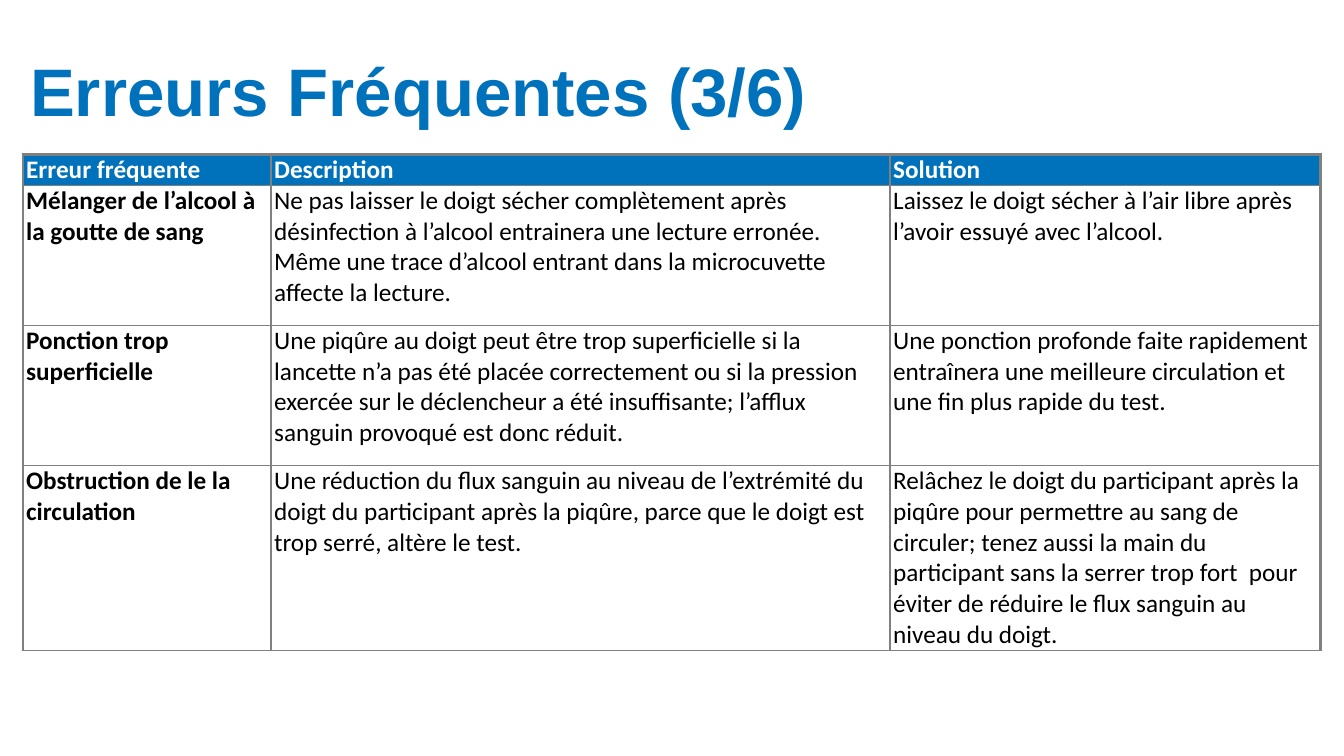
import pptx
import pptx.util
import pptx.dml.color
import pptx.enum.text
import pptx.oxml.ns
import lxml.etree

Cm = pptx.util.Cm
Pt = pptx.util.Pt
RGBColor = pptx.dml.color.RGBColor
ANCHOR = pptx.enum.text.MSO_ANCHOR
BLUE = RGBColor(0x00, 0x72, 0xBC)
WHITE = RGBColor(0xFF, 0xFF, 0xFF)
BLACK = RGBColor(0x00, 0x00, 0x00)
GREY = RGBColor(0x80, 0x80, 0x80)
THIN, THICK = Pt(1), Pt(2.25)


def write(frame, text, font="Calibri", size=18, color=BLACK, bold=False):
    frame.word_wrap = True
    part = frame.paragraphs[0]
    part.alignment = pptx.enum.text.PP_ALIGN.LEFT
    run = part.add_run()
    run.text = text
    run.font.name = font
    run.font.size = Pt(size)
    run.font.bold = bold
    run.font.color.rgb = color


def edge(cell, side, width):
    """Draw one border of a cell; side is L, R, T or B."""
    qn = pptx.oxml.ns.qn
    props = cell._tc.get_or_add_tcPr()
    line = lxml.etree.SubElement(props, qn("a:ln" + side), w=str(width))
    fill = lxml.etree.SubElement(line, qn("a:solidFill"))
    lxml.etree.SubElement(fill, qn("a:srgbClr"), val=str(GREY))


deck = pptx.Presentation()
deck.slide_width, deck.slide_height = Cm(33.87), Cm(19.05)
slide = deck.slides.add_slide(deck.slide_layouts[5])

title = slide.shapes.title
title.left, title.top = Cm(0.76), Cm(0.76)
title.width, title.height = Cm(32.44), Cm(2.54)
frame = title.text_frame
frame.auto_size = pptx.enum.text.MSO_AUTO_SIZE.NONE
frame.vertical_anchor = ANCHOR.BOTTOM
frame.margin_left = frame.margin_right = 0
frame.margin_top = frame.margin_bottom = 0
write(frame, "Erreurs Fréquentes (3/6)", font="Arial", size=48, color=BLUE, bold=True)
frame.paragraphs[0].line_spacing = 0.9

rows = [
    ("Erreur fréquente", "Description", "Solution"),
    ("Mélanger de l’alcool à la goutte de sang",
     "Ne pas laisser le doigt sécher complètement après désinfection à l’alcool "
     "entrainera une lecture erronée. Même une trace d’alcool entrant dans la "
     "microcuvette affecte la lecture.",
     "Laissez le doigt sécher à l’air libre après l’avoir essuyé avec l’alcool."),
    ("Ponction trop superficielle",
     "Une piqûre au doigt peut être trop superficielle si la lancette n’a pas été "
     "placée correctement ou si la pression exercée sur le déclencheur a été "
     "insuffisante; l’afflux sanguin provoqué est donc réduit.",
     "Une ponction profonde faite rapidement entraînera une meilleure circulation "
     "et une fin plus rapide du test."),
    ("Obstruction de le la circulation",
     "Une réduction du flux sanguin au niveau de l’extrémité du doigt du participant "
     "après la piqûre, parce que le doigt est trop serré, altère le test.",
     "Relâchez le doigt du participant après la piqûre pour permettre au sang de "
     "circuler; tenez aussi la main du participant sans la serrer trop fort  pour "
     "éviter de réduire le flux sanguin au niveau du doigt."),
]
widths = [6.25, 15.6, 10.85]
heights = [0.78, 3.53, 3.53, 4.67]

table = slide.shapes.add_table(len(rows), len(widths), Cm(0.58), Cm(3.89),
                               Cm(sum(widths)), Cm(sum(heights))).table
table.horz_banding = False
for col, width in zip(table.columns, widths):
    col.width = Cm(width)
for row, height in zip(table.rows, heights):
    row.height = Cm(height)

last = len(widths) - 1
for r, texts in enumerate(rows):
    for c, text in enumerate(texts):
        cell = table.cell(r, c)
        head = r == 0
        cell.margin_left = cell.margin_right = Cm(0.08)
        cell.margin_top = cell.margin_bottom = 0
        cell.vertical_anchor = ANCHOR.TOP
        edge(cell, "L", THICK if c == 0 else THIN)
        edge(cell, "R", THICK if c == last else THIN)
        edge(cell, "T", THICK if head else THIN)
        edge(cell, "B", THIN)
        if head:
            cell.fill.solid()
            cell.fill.fore_color.rgb = BLUE
        else:
            cell.fill.background()
        write(cell.text_frame, text, color=WHITE if head else BLACK,
              bold=head or c == 0)

deck.save("out.pptx")
